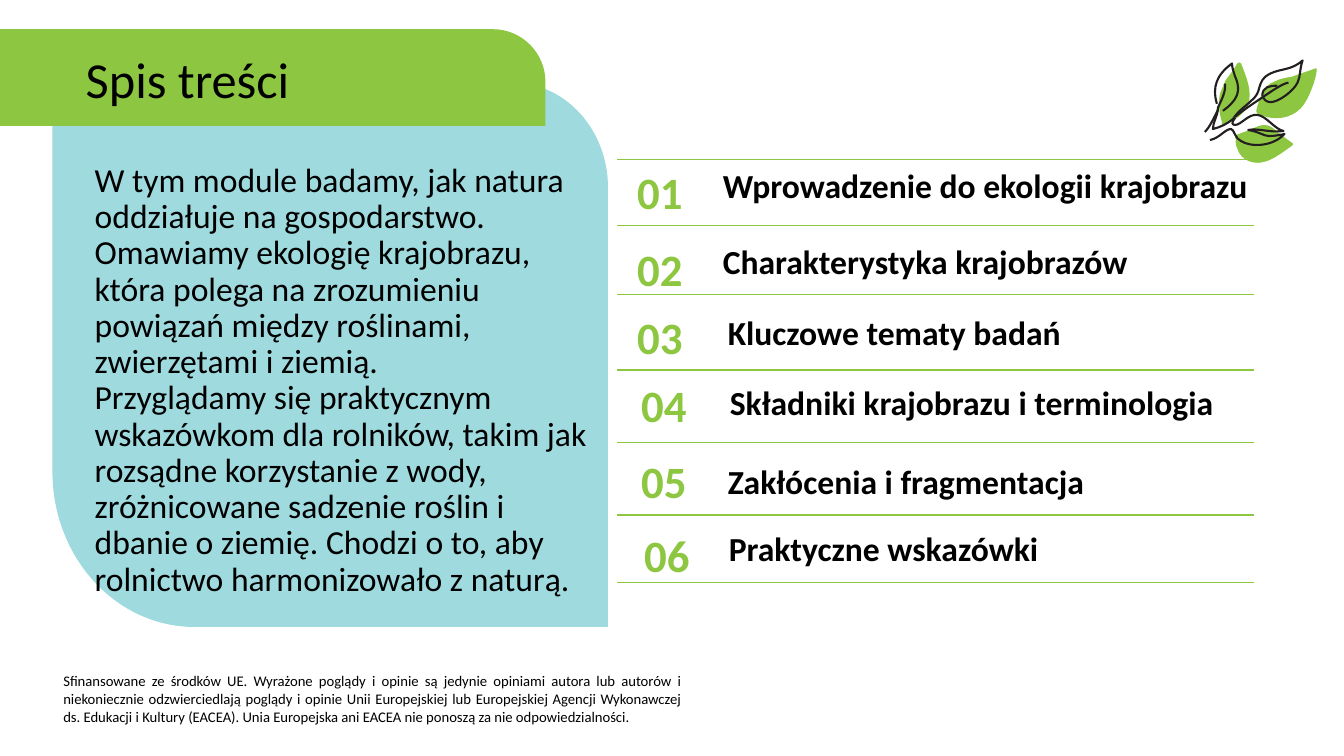
from lxml import etree
from pptx import Presentation
from pptx import util as u
from pptx.dml.color import RGBColor
from pptx.enum import text
from pptx.oxml.ns import qn

GREEN = RGBColor(0x8D, 0xC6, 0x41)
TEAL = RGBColor(0x9F, 0xDA, 0xDF)
INK = RGBColor(0x23, 0x1F, 0x20)
BLACK = RGBColor(0, 0, 0)
PX = 9144

INTRO = [
    "W tym module badamy, jak natura oddziałuje na gospodarstwo. Omawiamy ekologię krajobrazu, "
    "która polega na zrozumieniu powiązań między roślinami, zwierzętami i ziemią.",
    "Przyglądamy się praktycznym wskazówkom dla rolników, takim jak rozsądne korzystanie z wody, "
    "zróżnicowane sadzenie roślin i dbanie o ziemię. Chodzi o to, aby rolnictwo harmonizowało z naturą.",
]
FUNDING = (
    "Sfinansowane ze środków UE. Wyrażone poglądy i opinie są jedynie opiniami autora lub autorów i "
    "niekoniecznie odzwierciedlają poglądy i opinie Unii Europejskiej lub Europejskiej Agencji Wykonawczej "
    "ds. Edukacji i Kultury (EACEA). Unia Europejska ani EACEA nie ponoszą za nie odpowiedzialności."
)
CHAPTERS = [
    (616, 156, 707, 149, "Wprowadzenie do ekologii krajobrazu"),
    (616, 232, 707, 224, "Charakterystyka krajobrazów"),
    (616, 300, 712, 294, "Kluczowe tematy badań"),
    (620, 367, 714, 364, "Składniki krajobrazu i terminologia"),
    (620, 443, 712, 442, "Zakłócenia i fragmentacja"),
    (623, 516, 713, 509, "Praktyczne wskazówki"),
]
RULES = [158, 224, 292, 367, 439, 511, 578]

TEAL_PANEL = [(603, 622), (193, 622), (115, 622, 52, 553, 52, 468), (52, 82), (508, 82),
              (561, 82, 603, 129, 603, 186)]
TITLE_BAND = [(-2, 29), (489, 29), (518, 29, 541, 53, 541, 81), (541, 125), (0, 125), (0, 48),
              (0, 44, 0, 41, -1, 37)]
LEAVES = [
    [(1217, 123), (1227, 118, 1238, 110, 1239, 99), (1241, 87, 1235, 74, 1231, 63),
     (1230, 61, 1228, 62, 1227, 63), (1224, 69, 1220, 74, 1216, 79), (1214, 83, 1212, 88, 1210, 93),
     (1208, 102, 1209, 112, 1212, 121), (1211, 123, 1212, 125, 1214, 124)],
    [(1286, 111), (1292, 107, 1296, 100, 1299, 93), (1302, 86, 1305, 78, 1306, 70),
     (1307, 68, 1305, 67, 1304, 68), (1297, 71, 1289, 73, 1282, 76), (1276, 77, 1269, 78, 1264, 81),
     (1258, 83, 1255, 87, 1252, 92), (1250, 98, 1247, 104, 1246, 110),
     (1246, 112, 1247, 113, 1248, 113), (1260, 119, 1275, 119, 1286, 111)],
    [(1281, 145), (1283, 144, 1283, 143, 1282, 142), (1276, 138, 1271, 134, 1266, 130),
     (1263, 127, 1259, 124, 1254, 124), (1250, 124, 1246, 126, 1242, 128),
     (1239, 129, 1235, 131, 1231, 132), (1228, 133, 1226, 134, 1226, 135),
     (1224, 135, 1225, 138, 1226, 138), (1225, 141, 1226, 145, 1227, 147),
     (1229, 153, 1233, 158, 1239, 160), (1255, 166, 1269, 153, 1281, 145)],
]
PEN_STROKES = [
    [(1207, 103), (1202, 86, 1207, 74, 1222, 63), (1222, 68, 1224, 72, 1225, 76),
     (1227, 80, 1228, 84, 1228, 89), (1227, 98, 1223, 101, 1218, 106), (1213, 110)],
    [(1215, 83), (1216, 91, 1212, 98, 1208, 107), (1208, 115, 1203, 121, 1203, 128),
     (1211, 126, 1217, 123, 1223, 118), (1229, 109, 1235, 106, 1241, 100),
     (1246, 96, 1248, 92, 1249, 87), (1251, 81, 1252, 77, 1260, 73),
     (1270, 68, 1281, 70, 1292, 60), (1289, 68, 1290, 76, 1287, 82),
     (1283, 90, 1271, 99, 1263, 101), (1259, 102, 1255, 101, 1253, 97)],
    [(1195, 131), (1200, 126, 1204, 117, 1208, 109)],
    [(1278, 82), (1272, 83, 1262, 90, 1253, 96), (1246, 101, 1236, 107, 1225, 116)],
    [(1252, 95), (1252, 86, 1260, 85, 1267, 85)],
    [(1200, 139), (1210, 137, 1215, 128, 1221, 128), (1224, 128, 1225, 138, 1231, 140),
     (1240, 146, 1262, 146, 1274, 133), (1269, 134, 1264, 135, 1259, 135),
     (1253, 135, 1250, 131, 1238, 129), (1249, 127, 1259, 132, 1273, 130),
     (1264, 128, 1256, 115, 1247, 114), (1238, 113, 1231, 124, 1225, 124),
     (1222, 124, 1221, 122, 1225, 117)],
]


def write(tf, paras, size=24, color=BLACK, bold=False, align=text.PP_ALIGN.LEFT,
          anchor=text.MSO_ANCHOR.MIDDLE, spacing=0.9, indent=0):
    tf.word_wrap = True
    tf.auto_size = text.MSO_AUTO_SIZE.NONE
    tf.vertical_anchor = anchor
    for i, words in enumerate(paras):
        p = tf.add_paragraph() if i else tf.paragraphs[0]
        p.alignment, p.line_spacing = align, spacing
        if indent:
            p._p.get_or_add_pPr().set("marL", str(indent * PX))
        r = p.add_run()
        r.text = words
        r.font.name, r.font.size, r.font.bold = "Calibri", u.Pt(size), bold
        r.font.color.rgb = color


class Page:
    """Draws the elements of one slide in a shared style."""

    def __init__(self, prs):
        self.s = prs.slides.add_slide(prs.slide_layouts[5])

    def title(self, words, x, y, w, h, **fmt):
        sp = self.s.shapes.title
        sp.left, sp.top, sp.width, sp.height = (v * PX for v in (x, y, w, h))
        write(sp.text_frame, [words], **fmt)
        sp.element.getparent().append(sp.element)

    def text(self, paras, x, y, w, h, **fmt):
        sp = self.s.shapes.add_textbox(*(v * PX for v in (x, y, w, h)))
        write(sp.text_frame, paras, **fmt)

    def rule(self, x1, x2, y):
        c = self.s.shapes.add_connector(1, x1 * PX, y * PX, x2 * PX, y * PX)
        c.line.color.rgb, c.line.width = GREEN, u.Pt(1)
        etree.SubElement(c.element.spPr, qn("a:effectLst"))

    def outline(self, *contours, fill=None, pen=None):
        fb = self.s.shapes.build_freeform(*(v * PX for v in contours[0][0]))
        for i, (start, *steps) in enumerate(contours):
            if i:
                fb.move_to(*(v * PX for v in start))
            fb.add_line_segments([(x * PX, y * PX) for *_, x, y in steps], close=fill is not None)
        sp = fb.convert_to_shape()
        self.bend(sp, [step for contour in contours for step in contour[1:]])
        sp.shadow.inherit = False
        if fill is None:
            sp.fill.background()
            sp.line.color.rgb, sp.line.width = pen, u.Pt(1.5)
        else:
            sp.fill.solid()
            sp.fill.fore_color.rgb = fill
            sp.line.fill.background()

    def bend(self, sp, steps):
        for line, step in zip(list(sp.element.iter(qn("a:lnTo"))), steps):
            if len(step) == 6:
                curve = etree.Element(qn("a:cubicBezTo"))
                for x, y in zip(step[::2], step[1::2]):
                    etree.SubElement(curve, qn("a:pt"), x=str(x * PX - sp.left), y=str(y * PX - sp.top))
                line.getparent().replace(line, curve)


def main():
    prs = Presentation()
    prs.slide_width, prs.slide_height = 1333 * PX, 750 * PX
    page = Page(prs)
    page.outline(TEAL_PANEL, fill=TEAL)
    page.outline(TITLE_BAND, fill=GREEN)
    page.title("Spis treści", 75, 42, 551, 79, size=36)
    for y in RULES:
        page.rule(1244, 612, y)
    page.text(INTRO, 59, 157, 542, 436, anchor=text.MSO_ANCHOR.TOP, indent=25)
    for n, (num_x, num_y, x, y, label) in enumerate(CHAPTERS, 1):
        page.text([f"{n:02}"], num_x, num_y, 77, 75, size=32, color=GREEN, bold=True,
                  align=text.PP_ALIGN.CENTER)
        page.text([label], x, y, 545, 75, bold=True)
    page.text([FUNDING], 53, 662, 633, 66, size=10.5, align=text.PP_ALIGN.JUSTIFY,
              anchor=text.MSO_ANCHOR.TOP, spacing=1.0)
    for leaf in LEAVES:
        page.outline(leaf, fill=GREEN)
    page.outline(*PEN_STROKES, pen=INK)
    prs.save("out.pptx")


if __name__ == "__main__":
    main()
